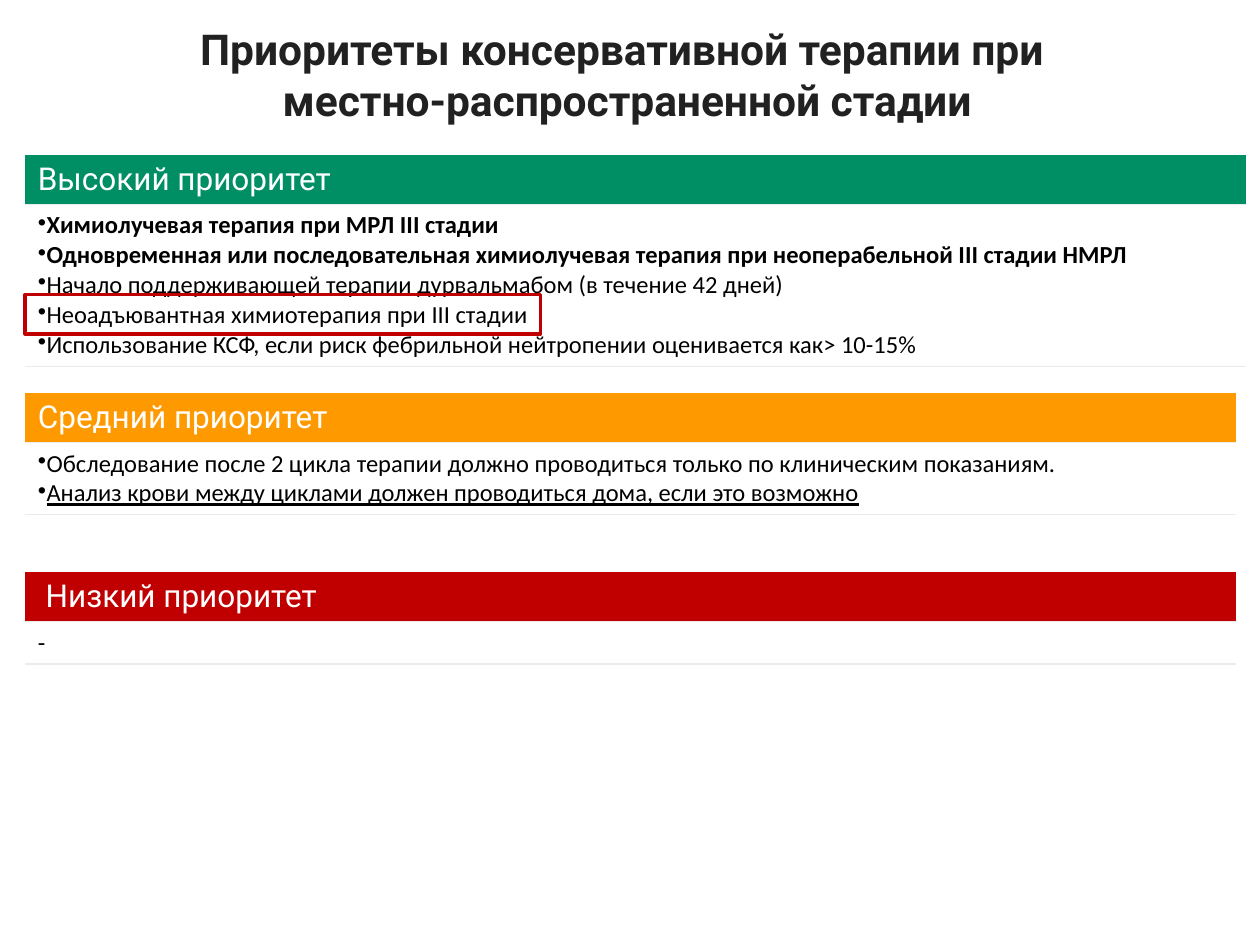
from dataclasses import dataclass
from typing import Any

from lxml import etree
from pptx import Presentation
from pptx.dml.color import RGBColor
from pptx.enum.shapes import MSO_SHAPE
from pptx.enum.text import MSO_ANCHOR, PP_ALIGN
from pptx.oxml.ns import qn
from pptx.slide import Slide
from pptx.util import Cm, Pt

RECT = MSO_SHAPE.RECTANGLE
TOP = MSO_ANCHOR.TOP
LEFT = PP_ALIGN.LEFT
CENTER = PP_ALIGN.CENTER
EDGE = 0.51
HEAD = 0.99
WHITE, BLACK, RED, GRAY = "FFFFFF", "000000", "C00000", "EBEBEB"


@dataclass(frozen=True)
class Item:
    text: str
    bold: bool = False
    under: bool = False
    bullet: bool = True


@dataclass(frozen=True)
class Block:
    title: str
    color: str
    top: float
    width: float
    items: tuple[Item, ...]


BLOCKS = (
    Block("Высокий приоритет", "008F64", 3.12, 24.61, (
        Item("Химиолучевая терапия при МРЛ III стадии", bold=True),
        Item("Одновременная или последовательная химиолучевая терапия "
             "при неоперабельной III стадии НМРЛ", bold=True),
        Item("Начало поддерживающей терапии дурвальмабом (в течение 42 дней)"),
        Item("Неоадъювантная химиотерапия при III стадии"),
        Item("Использование КСФ, если риск фебрильной нейтропении "
             "оценивается как> 10-15%"),
    )),
    Block("Средний приоритет", "FF9900", 7.92, 24.41, (
        Item("Обследование после 2 цикла терапии должно проводиться "
             "только по клиническим показаниям."),
        Item("Анализ крови между циклами должен проводиться дома, "
             "если это возможно", under=True),
    )),
    Block(" Низкий приоритет", RED, 11.53, 24.41, (Item("-", bullet=False),)),
)
TITLE = ("Приоритеты консервативной терапии при ", "местно-распространенной стадии")


def paint(hue: str) -> RGBColor:
    return RGBColor.from_string(hue)


def write(frame: Any, text: str, *, size: float, font: str, color: str,
          bold: bool = False, under: bool = False, bullet: bool = False,
          align: Any = LEFT) -> None:
    para = frame.paragraphs[0]
    if para.runs:
        para = frame.add_paragraph()
    para.alignment = align
    if bullet:
        props = para._p.get_or_add_pPr()
        props.set("marL", "0")
        props.set("indent", "0")
        etree.SubElement(props, qn("a:buChar"), char="•")
    run = para.add_run()
    run.text = text
    run.font.size = Pt(size)
    run.font.name = font
    run.font.bold = bold
    run.font.underline = under
    run.font.color.rgb = paint(color)


def style(cell: Any, fill: str, sides: str) -> None:
    props = cell._tc.get_or_add_tcPr()
    for side in "LRTB":
        line = etree.SubElement(props, qn(f"a:ln{side}"), w=str(Pt(0.75)))
        if side in sides:
            solid = etree.SubElement(line, qn("a:solidFill"))
            etree.SubElement(solid, qn("a:srgbClr"), val=GRAY)
        else:
            etree.SubElement(line, qn("a:noFill"))
    cell.fill.solid()
    cell.fill.fore_color.rgb = paint(fill)


def draw_block(slide: Slide, block: Block) -> None:
    body = 0.25 + 0.6 * len(block.items)
    table = slide.shapes.add_table(2, 1, Cm(EDGE), Cm(block.top),
                                   Cm(block.width), Cm(HEAD + body)).table
    table.horz_banding = False
    table.rows[0].height = Cm(HEAD)
    table.rows[1].height = Cm(body)
    head, cell = table.cell(0, 0), table.cell(1, 0)
    style(head, block.color, "B")
    style(cell, WHITE, "TB")
    write(head.text_frame, block.title, size=18, font="Roboto", color=WHITE)
    for item in block.items:
        write(cell.text_frame, item.text, size=14, font="Calibri", color=BLACK,
              bold=item.bold, under=item.under, bullet=item.bullet)


def draw_title(slide: Slide) -> None:
    frame = slide.shapes.add_textbox(Cm(0.3), Cm(0.47), Cm(24.69), Cm(3.18)).text_frame
    frame.word_wrap = True
    frame.vertical_anchor = TOP
    frame.margin_top = 0
    for line in TITLE:
        write(frame, line, size=24.3, font="Roboto", color="212121",
              bold=True, align=CENTER)


def draw_frame(slide: Slide) -> None:
    box = slide.shapes.add_shape(RECT, Cm(EDGE), Cm(5.94), Cm(10.39), Cm(0.79))
    box.shadow.inherit = False
    box.fill.background()
    box.line.color.rgb = paint(RED)
    box.line.width = Pt(2)


def main() -> None:
    """Build the slide of therapy priorities and save it."""
    deck = Presentation()
    deck.slide_width, deck.slide_height = Cm(25.4), Cm(19.05)
    slide = deck.slides.add_slide(deck.slide_layouts[6])
    for block in BLOCKS:
        draw_block(slide, block)
    draw_title(slide)
    draw_frame(slide)
    deck.save("out.pptx")


if __name__ == "__main__":
    main()
